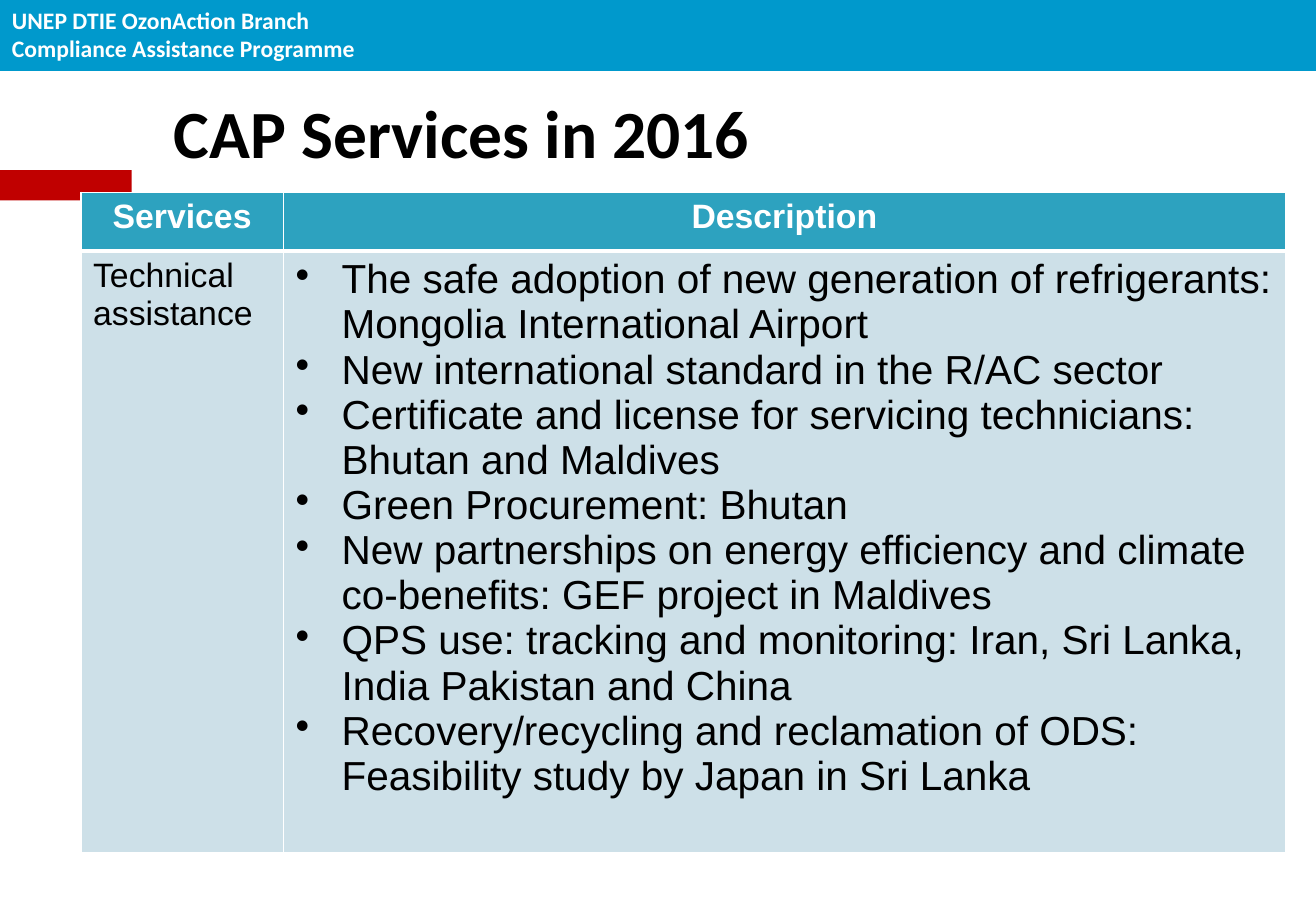
"""Build the slide on the services of the programme in 2016."""
import pptx
import pptx.dml.color
import pptx.enum.shapes
import pptx.enum.text
import pptx.oxml.ns
import pptx.util
from lxml import etree

COLS, ROWS = 130, 90
UNIT = pptx.util.Inches(1) // 12
WHITE, BLACK = "FFFFFF", "000000"
RED, BLUE, TEAL, PALE = "C00000", "0099CC", "2DA2BF", "CDE0E8"
BRANCH = ["UNEP DTIE OzonAction Branch", "Compliance Assistance Programme"]
ITEMS = [
    "The safe adoption of new generation of refrigerants: Mongolia International Airport",
    "New international standard in the R/AC sector",
    "Certificate and license for servicing technicians: Bhutan and Maldives",
    "Green Procurement: Bhutan",
    "New partnerships on energy efficiency and climate co-benefits: GEF project in Maldives",
    "QPS use: tracking and monitoring: Iran, Sri Lanka, India Pakistan and China",
    "Recovery/recycling and reclamation of ODS: Feasibility study by Japan in Sri Lanka",
]


def grid(*cells):
    """Turn grid counts into slide lengths."""
    return [round(n * UNIT) for n in cells]


def paint(fill, tone):
    """Give a fill one solid colour."""
    fill.solid()
    fill.fore_color.rgb = pptx.dml.color.RGBColor.from_string(tone)


def write(frame, lines, size, tone, face="Arial", bold=False, mid=False):
    """Set the lines of a frame and format their runs."""
    frame.text = "\n".join(lines)
    for para in frame.paragraphs:
        if mid:
            para.alignment = pptx.enum.text.PP_ALIGN.CENTER
        for run in para.runs:
            run.font.size = pptx.util.Pt(size)
            run.font.name = face
            run.font.bold = bold
            paint(run.font.fill, tone)


def band(slide, area, tone):
    """Draw a plain colour band."""
    kind = pptx.enum.shapes.MSO_SHAPE.RECTANGLE
    shape = slide.shapes.add_shape(kind, *grid(*area))
    shape.shadow.inherit = False
    paint(shape.fill, tone)
    shape.line.fill.background()


def label(slide, area, lines, size, tone, anchor):
    """Place a bold text box."""
    frame = slide.shapes.add_textbox(*grid(*area)).text_frame
    frame.word_wrap = True
    frame.vertical_anchor = anchor
    write(frame, lines, size, tone, "Calibri", True)


def bullet(para):
    """Give a paragraph a hanging bullet."""
    props = para._p.get_or_add_pPr()
    inset = pptx.util.Inches(0.38)
    props.set("marL", str(inset))
    props.set("indent", str(-inset))
    mark = etree.SubElement(props, pptx.oxml.ns.qn("a:buChar"))
    mark.set("char", "•")


def edge(cell, side, width):
    """Draw one white border of a cell."""
    name = pptx.oxml.ns.qn
    line = etree.Element(name("a:ln" + side), w=str(pptx.util.Pt(width)))
    fill = etree.SubElement(line, name("a:solidFill"))
    etree.SubElement(fill, name("a:srgbClr"), val=WHITE)
    cell._tc.get_or_add_tcPr().append(line)


def frame_cell(cell, top, base, tone):
    """Border a cell and then fill it."""
    for side, width in zip("LRTB", (1, 1, top, base)):
        edge(cell, side, width)
    paint(cell.fill, tone)


def services(slide):
    """Add the table of services."""
    wide, high = (20, 99), (5.8, 59.4)
    area = grid(8, 19, sum(wide), sum(high))
    table = slide.shapes.add_table(2, 2, *area).table
    for col, width in zip(table.columns, grid(*wide)):
        col.width = width
    for row, height in zip(table.rows, grid(*high)):
        row.height = height
    for col, head in enumerate(["Services", "Description"]):
        cell = table.cell(0, col)
        write(cell.text_frame, [head], 20, WHITE, bold=True, mid=True)
        frame_cell(cell, 1, 3, TEAL)
    for col, (lines, size) in enumerate([(["Technical assistance"], 20), (ITEMS, 24)]):
        cell = table.cell(1, col)
        write(cell.text_frame, lines, size, BLACK)
        frame_cell(cell, 3, 1, PALE)
    for para in table.cell(1, 1).text_frame.paragraphs:
        bullet(para)


def main():
    """Build and save the slide."""
    deck = pptx.Presentation()
    deck.slide_width, deck.slide_height = grid(COLS, ROWS)
    slide = deck.slides.add_slide(deck.slide_layouts[6])
    anchor = pptx.enum.text.MSO_ANCHOR
    band(slide, (0, 16.8, 13, 3), RED)
    band(slide, (0, 0, COLS, 7), BLUE)
    label(slide, (0, 0, 38, 7), BRANCH, 14, WHITE, anchor.TOP)
    label(slide, (16, 8, 112, 10), ["CAP Services in 2016"], 40, BLACK, anchor.MIDDLE)
    services(slide)
    deck.save("out.pptx")


if __name__ == "__main__":
    main()
